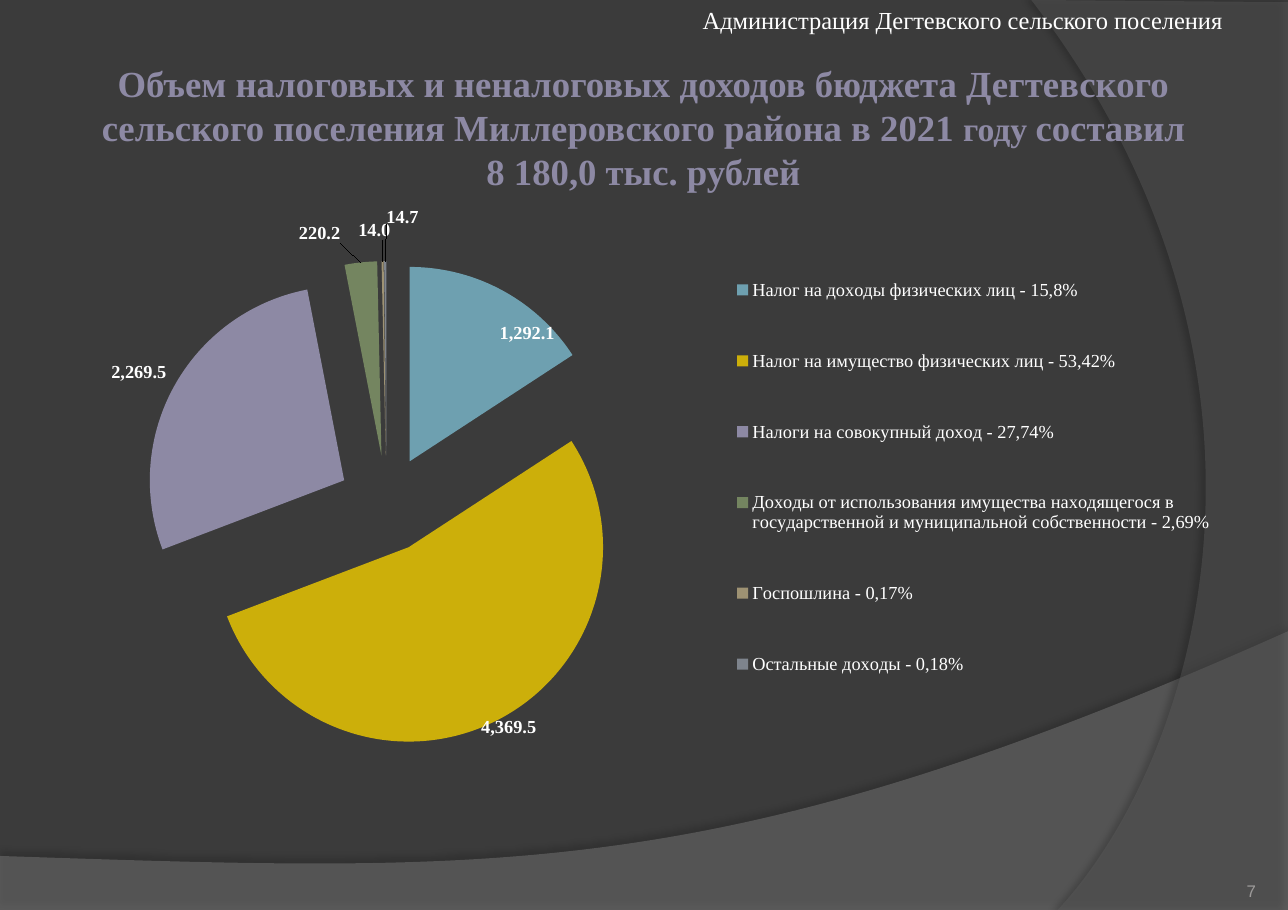
from dataclasses import dataclass

from lxml.etree import SubElement
from pptx import Presentation
from pptx.chart.data import CategoryChartData
from pptx.dml.color import RGBColor
from pptx.enum.chart import XL_CHART_TYPE as ChartType
from pptx.enum.chart import XL_LABEL_POSITION as LabelPos
from pptx.enum.chart import XL_LEGEND_POSITION as LegendPos
from pptx.enum.text import MSO_ANCHOR as Anchor
from pptx.enum.text import PP_ALIGN as Align
from pptx.oxml import parse_xml
from pptx.oxml.ns import nsdecls, qn
from pptx.util import Inches, Pt


@dataclass(frozen=True)
class Theme:
    background: str = "3B3B3B"
    wave: str = "7F7F7F"
    arc: str = "5E5E5E"
    shadow: str = "000000"
    title: str = "8D89A4"
    text: str = "FFFFFF"
    number: str = "9D9B9A"
    slices: tuple = ("6EA0B0", "CCAF0A", "8D89A4", "748560", "9E9273", "7E848D")
    serif: str = "Times New Roman"
    sans: str = "Arial"
    title_size: int = 24
    title_small: int = 22
    header_size: int = 16
    chart_size: int = 12
    chart_base: int = 10
    number_size: int = 11


REVENUES = [
    ("Налог на доходы физических лиц - 15,8%", 1292.1),
    ("Налог на имущество физических лиц - 53,42%", 4369.5),
    ("Налоги на совокупный доход - 27,74%", 2269.5),
    ("Доходы от использования имущества находящегося в государственной "
     "и муниципальной собственности - 2,69%", 220.2),
    ("Госпошлина - 0,17%", 14.0),
    ("Остальные доходы - 0,18%", 14.7),
]
LABEL_SHIFT_PERCENTS = [(-0.5, 10.8), (-1.6, -1.6), (-0.2, -0.2),
                        (-1.7, -2.4), (-0.7, -2.7), (1.5, -5.6)]


def layout_xml(**values):
    modes = "".join(f'<c:{k}Mode val="edge"/>' for k in ("x", "y") if "w" in values)
    target = '<c:layoutTarget val="inner"/>' if values.pop("inner", False) else ""
    body = "".join(f'<c:{k} val="{v}"/>' for k, v in values.items())
    return parse_xml(f'<c:layout {nsdecls("c")}><c:manualLayout>{target}{modes}{body}'
                     '</c:manualLayout></c:layout>')


class SlideBuilder:
    def __init__(self, prs, theme):
        self.theme = theme
        self.col = prs.slide_width / 100
        self.row = prs.slide_height / 100
        self.s = prs.slides.add_slide(prs.slide_layouts[6])
        fill = self.s.background.fill
        fill.solid()
        fill.fore_color.rgb = RGBColor.from_string(theme.background)

    def box(self, x, y, w, h):
        return [round(v) for v in (x * self.col, y * self.row, w * self.col, h * self.row)]

    def style(self, font, name, size, color, bold=False):
        font.name, font.bold = name, bold
        font.color.rgb = RGBColor.from_string(color)
        if size:
            font.size = Pt(size)

    def curve(self, corners, controls, color, alpha, shade, direction):
        start, *rest = [self.box(x, y, 0, 0)[:2] for x, y in corners + controls[-1:]]
        builder = self.s.shapes.build_freeform(*start)
        builder.add_line_segments(rest, close=True)
        sp = builder.convert_to_shape()
        last_line = list(sp._element.iter(qn("a:lnTo")))[-1]
        last_line.tag
        bend = parse_xml(f'<a:cubicBezTo {nsdecls("a")}/>')
        for x, y in controls:
            left, top = self.box(x, y, 0, 0)[:2]
            SubElement(bend, qn("a:pt"), x=str(left - sp.left), y=str(top - sp.top))
        last_line.getparent().replace(last_line, bend)
        sp.shadow.inherit = False
        sp.line.fill.background()
        sp.fill.solid()
        sp.fill.fore_color.rgb = RGBColor.from_string(color)
        srgb = next(sp._element.spPr.iter(qn("a:srgbClr")))
        SubElement(srgb, qn("a:alpha"), val=str(alpha * 1000))
        effects = sp._element.spPr.find(qn("a:effectLst"))
        outer = SubElement(effects, qn("a:outerShdw"), blurRad=str(Pt(4)), dist=str(Pt(4)),
                           dir=str(direction * 60000), algn="ctr", rotWithShape="0")
        tint = SubElement(outer, qn("a:srgbClr"), val=self.theme.shadow)
        SubElement(tint, qn("a:alpha"), val=str(shade * 1000))

    def text(self, box, runs, name, color, size=None, bold=False, align=Align.LEFT,
             anchor=Anchor.TOP, inset=True):
        tf = self.s.shapes.add_textbox(*self.box(*box)).text_frame
        tf.word_wrap, tf.vertical_anchor = True, anchor
        if not inset:
            tf.margin_left = tf.margin_right = tf.margin_top = tf.margin_bottom = 0
        p = tf.paragraphs[0]
        p.alignment = align
        self.style(p.font, name, size, color, bold)
        for words, run_size in runs:
            r = p.add_run()
            r.text = words
            if run_size:
                r.font.size = Pt(run_size)

    def pie(self, box, rows, shifts):
        th = self.theme
        data = CategoryChartData(number_format="#,##0.0")
        data.categories = [name for name, _ in rows]
        data.add_series("Series 1", [value for _, value in rows])
        chart = self.s.shapes.add_chart(ChartType.PIE, *self.box(*box), data).chart
        chart.has_title = False
        self.style(chart.font, th.sans, th.chart_base, th.text)
        plot = chart.plots[0]
        plot.vary_by_categories = True
        area = chart._chartSpace.chart.plotArea
        for old in area.findall(qn("c:layout")):
            area.remove(old)
        area.insert(0, layout_xml(inner=True, x=0.07, y=0.1, w=0.42, h=0.9))

        chart.has_legend = True
        legend = chart.legend
        legend.position = LegendPos.RIGHT
        legend.include_in_layout = False
        self.style(legend.font, th.serif, th.chart_size, th.text)
        legend._element.find(qn("c:legendPos")).addnext(
            layout_xml(x=0.57, y=0.04, w=0.43, h=0.92))

        series = plot.series[0]
        labels = series.data_labels
        labels.show_value = True
        labels.number_format, labels.number_format_is_linked = "#,##0.0", False
        labels.position = LabelPos.OUTSIDE_END
        self.style(labels.font, th.serif, th.chart_size, th.text, True)
        for i, (color, (dx, dy)) in enumerate(zip(th.slices, shifts)):
            point = series.points[i]
            point.format.fill.solid()
            point.format.fill.fore_color.rgb = RGBColor.from_string(color)
            label = point.data_label
            self.style(label.font, th.serif, th.chart_size, th.text, True)
            label.position = LabelPos.OUTSIDE_END
            idx = next(e for e in labels._element.iter(qn("c:idx")) if e.get("val") == str(i))
            idx.addnext(layout_xml(x=dx / 100, y=dy / 100))
        series._element.find(qn("c:dPt")).addprevious(
            parse_xml(f'<c:explosion {nsdecls("c")} val="25"/>'))


def main():
    prs = Presentation()
    prs.slide_width, prs.slide_height = Inches(11.69), Inches(8.26)
    th = Theme()
    b = SlideBuilder(prs, th)
    b.curve([(0, 94.07), (0, 100), (100, 100), (100, 69.37)],
            [(55.95, 97.22), (39.09, 95.88), (0, 94.07)], th.wave, 45, 35, 270)
    b.curve([(100, 0.24), (100, 100), (82.12, 100)],
            [(93.5, 82.57), (101.8, 40.07), (80.07, 0)], th.arc, 40, 45, 180)
    b.text((6.84, 6.66, 86.23, 14.65),
           [("Объем налоговых и неналоговых доходов бюджета Дегтевского сельского "
             "поселения Миллеровского района в 2021 ", th.title_size),
            ("году ", th.title_small),
            ("составил 8 180,0 тыс. рублей", th.title_size)],
           th.serif, th.title, bold=True, align=Align.CENTER, inset=False)
    b.pie((4.75, 22.76, 90.25, 59.32), REVENUES, LABEL_SHIFT_PERCENTS)
    b.text((89.22, 93.7, 8.3, 5.33), [("7", None)], th.sans, th.number, th.number_size,
           align=Align.RIGHT, anchor=Anchor.BOTTOM, inset=False)
    b.text((53.72, 0, 46.28, 4.48), [("Администрация Дегтевского сельского поселения", None)],
           th.serif, th.text, th.header_size)
    prs.save("out.pptx")


if __name__ == "__main__":
    main()
